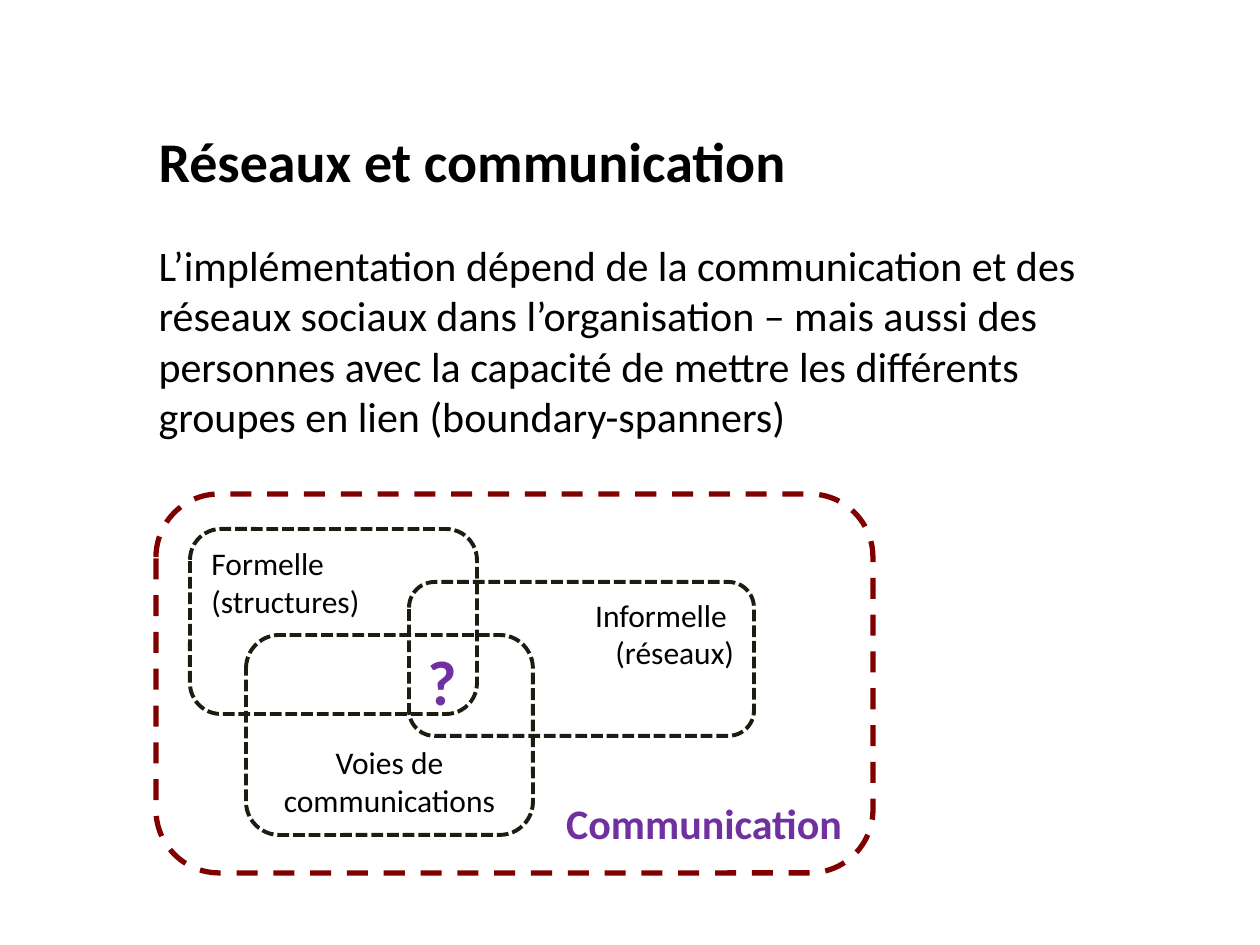
import dataclasses

import lxml.etree
import pptx
import pptx.dml.color
import pptx.enum.dml
import pptx.enum.shapes
import pptx.enum.text
import pptx.oxml.ns
import pptx.util

ALIGN = pptx.enum.text.PP_ALIGN
ANCHOR = pptx.enum.text.MSO_ANCHOR
DASH = pptx.enum.dml.MSO_LINE
FIT = pptx.enum.text.MSO_AUTO_SIZE
SCALE = 914400 // 126


@dataclasses.dataclass(frozen=True)
class Theme:
    """Hold the colours, font and type sizes of the slide."""
    font: str = "Calibri"
    ink: str = "000000"
    edge: str = "1E1C11"
    frame: str = "800000"
    accent: str = "7030A0"
    title: int = 32
    body: int = 24
    label: int = 18
    mark: int = 36


THEME = Theme()


def px(count):
    """Turn whole pixels into EMU."""
    return pptx.util.Emu(count * SCALE)


def rgb(code):
    """Turn a hex code into a colour."""
    return pptx.dml.color.RGBColor.from_string(code)


def apply(target, values):
    """Set each attribute of the target from a dict."""
    for name, value in values.items():
        setattr(target, name, value)


def place(shape, box):
    """Move and size a shape by its pixel box."""
    apply(shape, dict(zip(("left", "top", "width", "height"), map(px, box))))


def write(shape, lines, size, color=THEME.ink, bold=False,
          align=ALIGN.LEFT, anchor=ANCHOR.TOP, wrap=True, fit=FIT.NONE):
    """Fill a shape with formatted paragraphs."""
    frame = shape.text_frame
    frame.text = "\n".join(lines)
    apply(frame, {"word_wrap": wrap, "vertical_anchor": anchor, "auto_size": fit})
    for para in frame.paragraphs:
        apply(para, {"alignment": align, "space_before": pptx.util.Pt(0)})
        for run in para.runs:
            apply(run.font, {"name": THEME.font, "size": pptx.util.Pt(size), "bold": bold})
            run.font.color.rgb = rgb(color)


def plain(shape):
    """Remove bullets and indents from a list."""
    for para in shape.text_frame.paragraphs:
        props = para._p.get_or_add_pPr()
        for name in ("marL", "indent"):
            props.set(name, "0")
        lxml.etree.SubElement(props, pptx.oxml.ns.qn("a:buNone"))


def ring(slide, box, lines, size=THEME.label, edge=THEME.edge,
         width=2.25, dash=DASH.SQUARE_DOT, **style):
    """Add a dashed rounded box with text."""
    shape = slide.shapes.add_shape(
        pptx.enum.shapes.MSO_SHAPE.ROUNDED_RECTANGLE, *map(px, box))
    shape.shadow.inherit = False
    shape.fill.background()
    shape.line.color.rgb = rgb(edge)
    apply(shape.line, {"width": pptx.util.Pt(width), "dash_style": dash})
    write(shape, lines, size, **style)


def main():
    """Build and save the slide."""
    deck = pptx.Presentation()
    apply(deck, {"slide_width": px(1260), "slide_height": px(945)})
    slide = deck.slides.add_slide(deck.slide_layouts[1])

    title, body = slide.placeholders
    place(title, (146, 120, 890, 81))
    write(title, ["Réseaux et communication"], THEME.title, bold=True,
          fit=FIT.SHAPE_TO_FIT_TEXT)
    place(body, (146, 233, 1009, 217))
    write(body, ["L’implémentation dépend de la communication et des réseaux "
                 "sociaux dans l’organisation – mais aussi des personnes avec la "
                 "capacité de mettre les différents groupes en lien "
                 "(boundary-spanners)"], THEME.body, fit=FIT.SHAPE_TO_FIT_TEXT)
    plain(body)

    ring(slide, (190, 529, 287, 185), ["Formelle", "(structures)"])
    ring(slide, (246, 635, 287, 200), ["Voies de communications"],
         align=ALIGN.CENTER, anchor=ANCHOR.BOTTOM)
    ring(slide, (409, 582, 345, 154), ["Informelle ", "(réseaux)"], align=ALIGN.RIGHT)

    mark = slide.shapes.add_textbox(*map(px, (415, 636, 55, 89)))
    write(mark, ["?"], THEME.mark, color=THEME.accent, bold=True, wrap=False,
          fit=FIT.SHAPE_TO_FIT_TEXT)

    ring(slide, (156, 494, 717, 379), ["Communication"], THEME.body,
         edge=THEME.frame, width=3, dash=DASH.DASH, color=THEME.accent,
         bold=True, align=ALIGN.RIGHT, anchor=ANCHOR.BOTTOM)
    deck.save("out.pptx")


if __name__ == "__main__":
    main()
